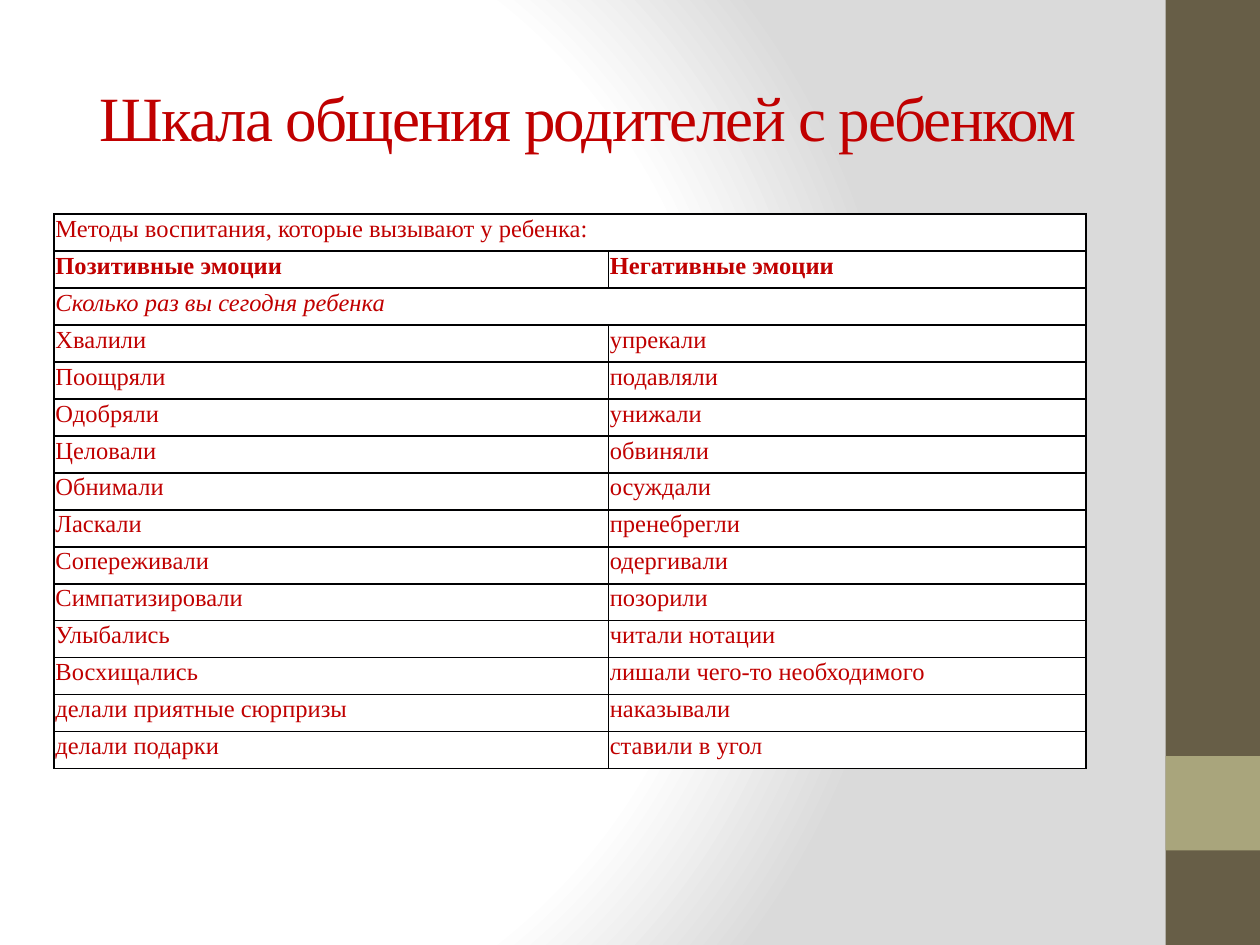
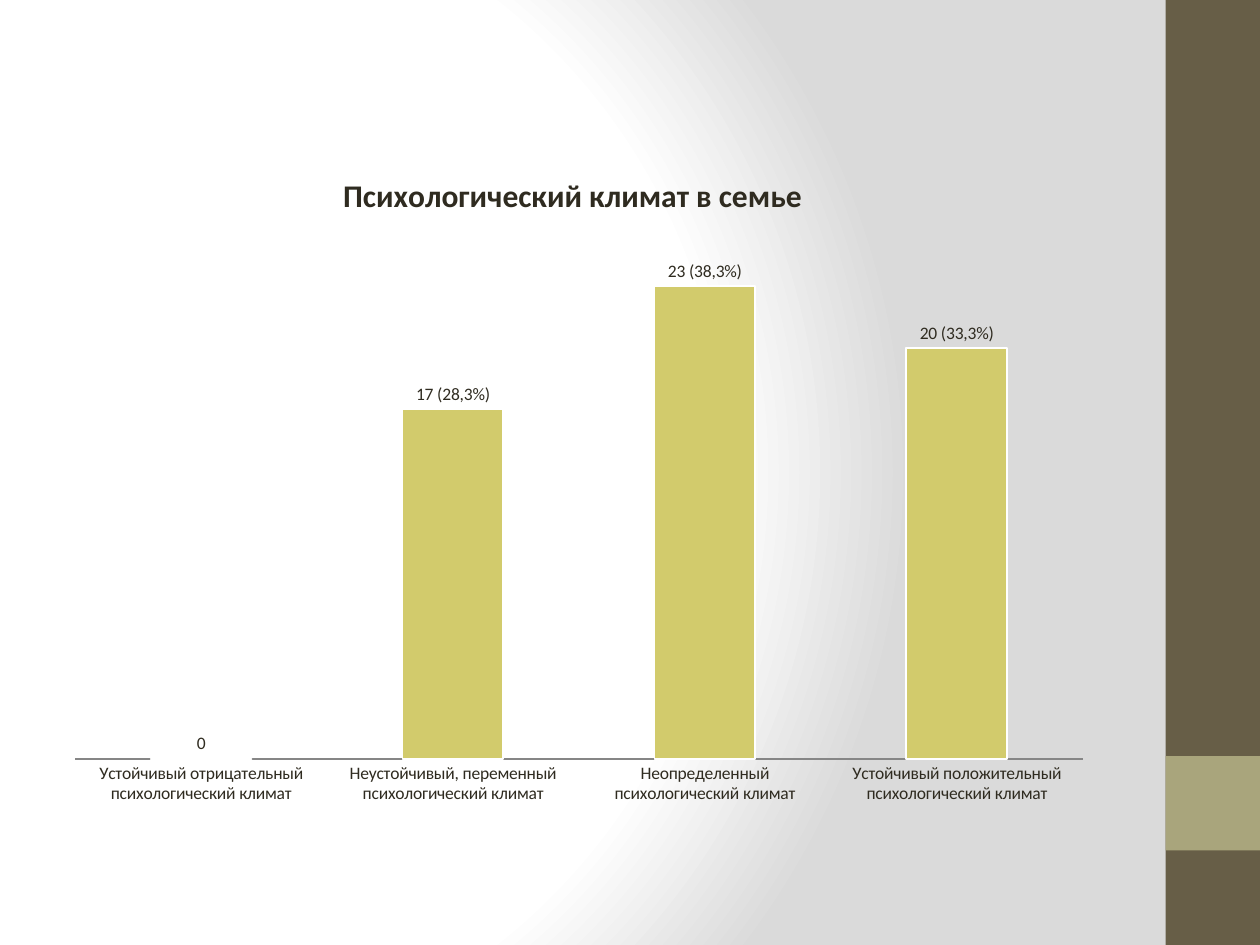
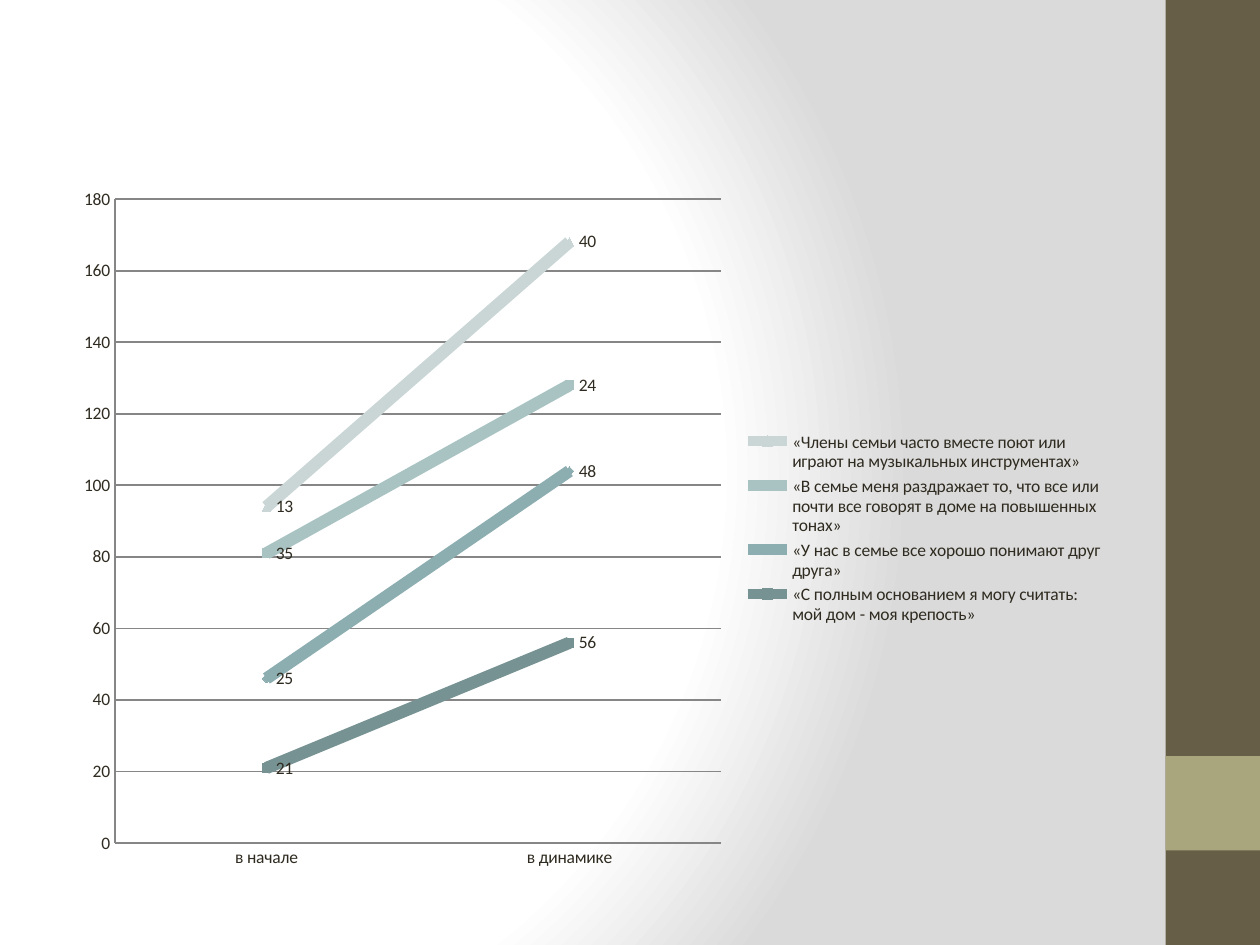
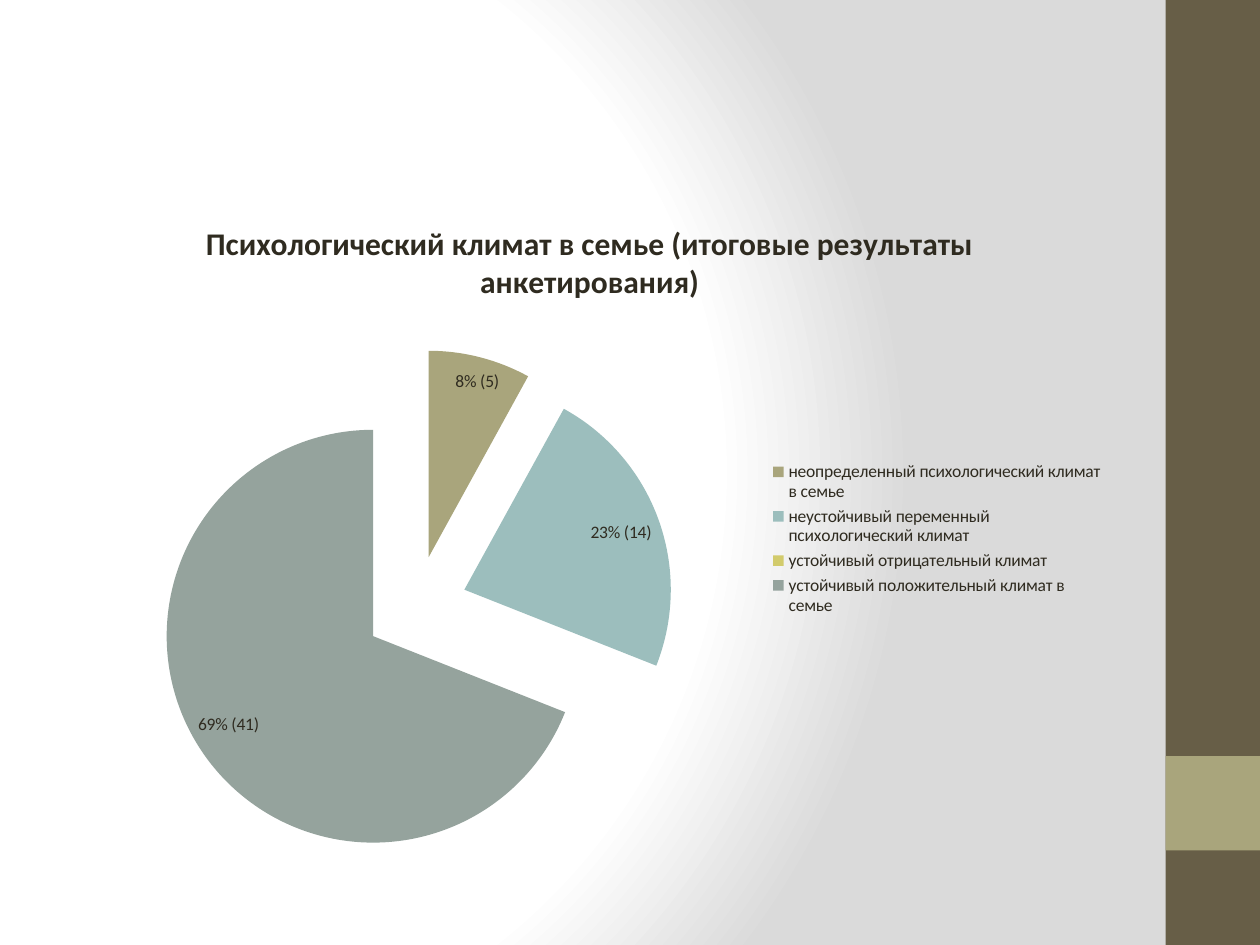
from dataclasses import dataclass
from pptx import Presentation
from pptx.chart.data import CategoryChartData
from pptx.dml.color import RGBColor
from pptx.enum.chart import (XL_CHART_TYPE, XL_LABEL_POSITION, XL_LEGEND_POSITION,
                             XL_MARKER_STYLE, XL_TICK_MARK)
from pptx.enum.shapes import MSO_SHAPE
from pptx.enum.text import MSO_ANCHOR, PP_ALIGN
from pptx.oxml import parse_xml
from pptx.oxml.ns import nsdecls, qn
from pptx.util import Inches, Pt


@dataclass(frozen=True)
class Theme:
    white: str = "FFFFFF"
    shade: str = "DADADA"
    band: str = "675E47"
    accent: str = "A9A57C"
    red: str = "C00000"
    ink: str = "2F2B20"
    grid: str = "868686"
    border: str = "000001"
    bars: str = "D2CB6C"
    lines: tuple = ("779293", "8DAEB0", "A9C3C3", "C9D6D5")
    slices: tuple = ("A9A57C", "9CBEBD", "D2CB6C", "95A39D")
    serif: str = "Times New Roman"
    sans: str = "Calibri"
    title: int = 36
    chart_title: int = 18
    table: int = 14
    chart: int = 10


T = Theme()

TABLE_ROWS = [
    ("Методы воспитания, которые вызывают у ребенка:",),
    ("Позитивные эмоции", "Негативные эмоции"),
    ("Сколько раз вы сегодня ребенка",),
    ("Хвалили", "упрекали"),
    ("Поощряли", "подавляли"),
    ("Одобряли", "унижали"),
    ("Целовали", "обвиняли"),
    ("Обнимали", "осуждали"),
    ("Ласкали", "пренебрегли"),
    ("Сопереживали", "одергивали"),
    ("Симпатизировали", "позорили"),
    ("Улыбались", "читали нотации"),
    ("Восхищались", "лишали чего-то необходимого"),
    ("делали приятные сюрпризы", "наказывали"),
    ("делали подарки", "ставили в угол"),
]
ROW_FORMATS = {1: {"bold": True}, 2: {"italic": True}}

CLIMATE = "Психологический климат в семье"
CLIMATE_COUNTS = {
    "Устойчивый отрицательный психологический климат": 0,
    "Неустойчивый, переменный психологический климат": 17,
    "Неопределенный психологический климат": 23,
    "Устойчивый положительный психологический климат": 20,
}
CLIMATE_LABELS = {1: "17 (28,3%)", 2: "23 (38,3%)", 3: "20 (33,3%)"}

STATEMENTS = {
    "«С полным основанием я могу считать: мой дом - моя крепость»": (21, 56),
    "«У нас в семье все хорошо понимают друг друга»": (25, 48),
    "«В семье меня раздражает то, что все или почти все говорят в доме "
    "на повышенных тонах»": (35, 24),
    "«Члены семьи часто вместе поют или играют на музыкальных инструментах»": (13, 40),
}

RESULTS = "Психологический климат в семье (итоговые результаты анкетирования)"
RESULT_SHARES = {
    "неопределенный психологический климат в семье": 8,
    "неустойчивый переменный психологический климат": 23,
    "устойчивый отрицательный климат": 0,
    "устойчивый положительный климат в семье": 69,
}
RESULT_LABELS = {0: "8% (5)", 1: "23% (14)", 3: "69% (41)"}
LABEL_SHIFTS = {0: (0.02, 0.01), 3: (-0.01, -0.02)}


def rgb(value):
    return RGBColor.from_string(value)


def paint(fill, color):
    fill.solid()
    fill.fore_color.rgb = rgb(color)


def style_line(line, color, width):
    paint(line.fill, color)
    line.width = Pt(width)


def style_font(font, color, **formats):
    font.color.rgb = rgb(color)
    for name, value in formats.items():
        setattr(font, name, value)


def set_background(master):
    """Give every slide the radial gradient through the master."""
    master.background.fill.solid()
    stops = "".join(
        f'<a:gs pos="{pos * 1000}"><a:srgbClr val="{color}"/></a:gs>'
        for pos, color in ((0, T.white), (75, T.white), (100, T.shade)))
    bg = master.element.find(".//" + qn("p:bgPr"))
    bg.replace(bg[0], parse_xml(
        f'<a:gradFill {nsdecls("a")} rotWithShape="1"><a:gsLst>{stops}</a:gsLst>'
        '<a:path path="circle"><a:fillToRect l="20000" t="50000" r="100000" b="50000"/>'
        '</a:path></a:gradFill>'))


def add_side_band(slide, left, top, width, height):
    square_top = top + height - 2 * width
    for y, h, color in ((top, height, T.band), (square_top, width, T.accent)):
        sp = slide.shapes.add_shape(MSO_SHAPE.RECTANGLE, Inches(left), Inches(y),
                                    Inches(width), Inches(h))
        sp.shadow.inherit = False
        paint(sp.fill, color)
        sp.line.fill.background()


def new_slide(prs):
    slide = prs.slides.add_slide(prs.slide_layouts[6])
    add_side_band(slide, 9.25, 0, 0.75, 7.5)
    return slide


def add_title(slide, text, box):
    tf = slide.shapes.add_textbox(*map(Inches, box)).text_frame
    tf.word_wrap = True
    tf.vertical_anchor = MSO_ANCHOR.MIDDLE
    p = tf.paragraphs[0]
    p.alignment = PP_ALIGN.CENTER
    r = p.add_run()
    r.text = text
    style_font(r.font, T.red, name=T.serif, size=Pt(T.title))
    r.font._element.set("spc", "-100")


def add_borders(cell):
    tc_pr = cell._tc.get_or_add_tcPr()
    for i, side in enumerate(("lnL", "lnR", "lnT", "lnB")):
        tc_pr.insert(i, parse_xml(
            f'<a:{side} {nsdecls("a")} w="12700"><a:solidFill>'
            f'<a:srgbClr val="{T.border}"/></a:solidFill></a:{side}>'))


def add_methods_table(slide, box, first_col):
    """Draw the table; a row with one text spans both columns."""
    left, top, width, height = box
    table = slide.shapes.add_table(len(TABLE_ROWS), 2, *map(Inches, box)).table
    table.first_row = table.horz_banding = False
    for col, w in zip(table.columns, (first_col, width - first_col)):
        col.width = Inches(w)
    for i, texts in enumerate(TABLE_ROWS):
        table.rows[i].height = Inches(height / len(TABLE_ROWS))
        for cell in table.rows[i].cells:
            for side in ("left", "right", "top", "bottom"):
                setattr(cell, f"margin_{side}", Inches(0.01))
            paint(cell.fill, T.white)
            add_borders(cell)
        if len(texts) == 1:
            table.cell(i, 0).merge(table.cell(i, 1))
        for j, text in enumerate(texts):
            r = table.cell(i, j).text_frame.paragraphs[0].add_run()
            r.text = text
            style_font(r.font, T.red, name=T.serif, size=Pt(T.table),
                       **ROW_FORMATS.get(i, {}))


def set_layout(before, target=None, mode=None, **fractions):
    """Place a chart part, by fractions of the chart, after the element given."""
    parent = before.getparent()
    for old in parent.findall(qn("c:layout")):
        parent.remove(old)
    parts = [("layoutTarget", target)] if target else []
    if mode:
        parts += [("xMode", mode), ("yMode", mode)]
    parts += fractions.items()
    body = "".join(f'<c:{name} val="{value}"/>' for name, value in parts)
    before.addnext(parse_xml(f'<c:layout {nsdecls("c")}><c:manualLayout>{body}'
                             '</c:manualLayout></c:layout>'))


def add_chart(slide, kind, box, cats, series, title=None, legend=True):
    data = CategoryChartData()
    data.categories = list(cats)
    for name, values in series.items():
        data.add_series(name, list(values))
    chart = slide.shapes.add_chart(kind, *map(Inches, box), data).chart
    style_font(chart.font, T.ink, name=T.sans, size=Pt(T.chart))
    chart.has_title = title is not None
    if title:
        r = chart.chart_title.text_frame.paragraphs[0].add_run()
        r.text = title
        style_font(r.font, T.ink, name=T.sans, size=Pt(T.chart_title), bold=True)
    chart.has_legend = legend
    if legend:
        chart.legend.position = XL_LEGEND_POSITION.RIGHT
        chart.legend.include_in_layout = False
    return chart


def label_points(series, labels, position):
    for i, text in labels.items():
        label = series.points[i].data_label
        r = label.text_frame.paragraphs[0].add_run()
        r.text = text
        style_font(r.font, T.ink, name=T.sans, size=Pt(T.chart))
        label.position = position


def show_values(series, position):
    series.data_labels.show_value = True
    series.data_labels.position = position


def style_axis(axis):
    axis.major_tick_mark = axis.minor_tick_mark = XL_TICK_MARK.NONE
    style_line(axis.format.line, T.grid, 1)


def add_climate_bars(slide, box):
    chart = add_chart(slide, XL_CHART_TYPE.COLUMN_CLUSTERED, box, CLIMATE_COUNTS,
                      {CLIMATE: CLIMATE_COUNTS.values()}, CLIMATE, legend=False)
    title = chart.chart_title._element
    set_layout(title.find(qn("c:tx")), mode="edge", x=0.27, y=0.02)
    style_axis(chart.category_axis)
    chart.value_axis.visible = False
    chart.value_axis.has_major_gridlines = False
    plot = chart.plots[0]
    plot.vary_by_categories = False
    plot.gap_width = 150
    bars = plot.series[0]
    paint(bars.format.fill, T.bars)
    style_line(bars.format.line, T.white, 1)
    show_values(bars, XL_LABEL_POSITION.OUTSIDE_END)
    label_points(bars, CLIMATE_LABELS, XL_LABEL_POSITION.OUTSIDE_END)


def add_statement_lines(slide, box):
    chart = add_chart(slide, XL_CHART_TYPE.LINE_MARKERS_STACKED, box,
                      ("в начале", "в динамике"), STATEMENTS)
    for axis in (chart.category_axis, chart.value_axis):
        style_axis(axis)
    chart.value_axis.has_major_gridlines = True
    style_line(chart.value_axis.major_gridlines.format.line, T.grid, 1)
    markers = (XL_MARKER_STYLE.SQUARE, XL_MARKER_STYLE.DIAMOND,
               XL_MARKER_STYLE.SQUARE, XL_MARKER_STYLE.TRIANGLE)
    plot = chart.plots[0]
    plot.vary_by_categories = False
    for series, color, marker in zip(plot.series, T.lines, markers):
        series.smooth = False
        style_line(series.format.line, color, 7)
        series.marker.style = marker
        series.marker.size = 5
        paint(series.marker.format.fill, color)
        series.marker.format.line.fill.background()
        show_values(series, XL_LABEL_POSITION.RIGHT)


def add_result_pie(slide, box):
    chart = add_chart(slide, XL_CHART_TYPE.PIE, box, RESULT_SHARES,
                      {RESULTS: RESULT_SHARES.values()}, RESULTS)
    plot = chart.plots[0]
    plot.vary_by_categories = True
    area = plot._element.getparent()
    for old in area.findall(qn("c:layout")):
        area.remove(old)
    area.insert(0, parse_xml(
        f'<c:layout {nsdecls("c")}><c:manualLayout><c:layoutTarget val="inner"/>'
        '<c:xMode val="edge"/><c:yMode val="edge"/><c:x val="0.09"/><c:y val="0.22"/>'
        '<c:w val="0.49"/><c:h val="0.76"/></c:manualLayout></c:layout>'))
    pie = plot.series[0]
    for i, color in enumerate(T.slices):
        paint(pie.points[i].format.fill, color)
    label_points(pie, RESULT_LABELS, XL_LABEL_POSITION.INSIDE_END)
    pie.data_labels.show_value = False
    for label in pie._element.iter(qn("c:dLbl")):
        idx = label.find(qn("c:idx"))
        shift = LABEL_SHIFTS.get(int(idx.get("val")))
        if shift:
            set_layout(idx, x=shift[0], y=shift[1])
    explosion = f'<c:explosion {nsdecls("c")} val="25"/>'
    points = pie._element.findall(qn("c:dPt"))
    points[0].addprevious(parse_xml(explosion))
    for point in points:
        point.find(qn("c:spPr")).addprevious(parse_xml(explosion))


def main():
    prs = Presentation()
    prs.slide_width, prs.slide_height = Inches(10), Inches(7.5)
    set_background(prs.slide_master)

    slide = new_slide(prs)
    add_title(slide, "Шкала общения родителей с ребенком", (0.5, 0.3, 8.33, 1.25))
    add_methods_table(slide, (0.43, 1.7, 8.19, 4.4), first_col=4.4)
    add_climate_bars(new_slide(prs), (0.43, 1.23, 8.33, 5.25))
    add_statement_lines(new_slide(prs), (0.5, 1.39, 8.36, 5.61))
    add_result_pie(new_slide(prs), (0.5, 1.55, 8.36, 5.45))
    prs.save("out.pptx")


if __name__ == "__main__":
    main()
